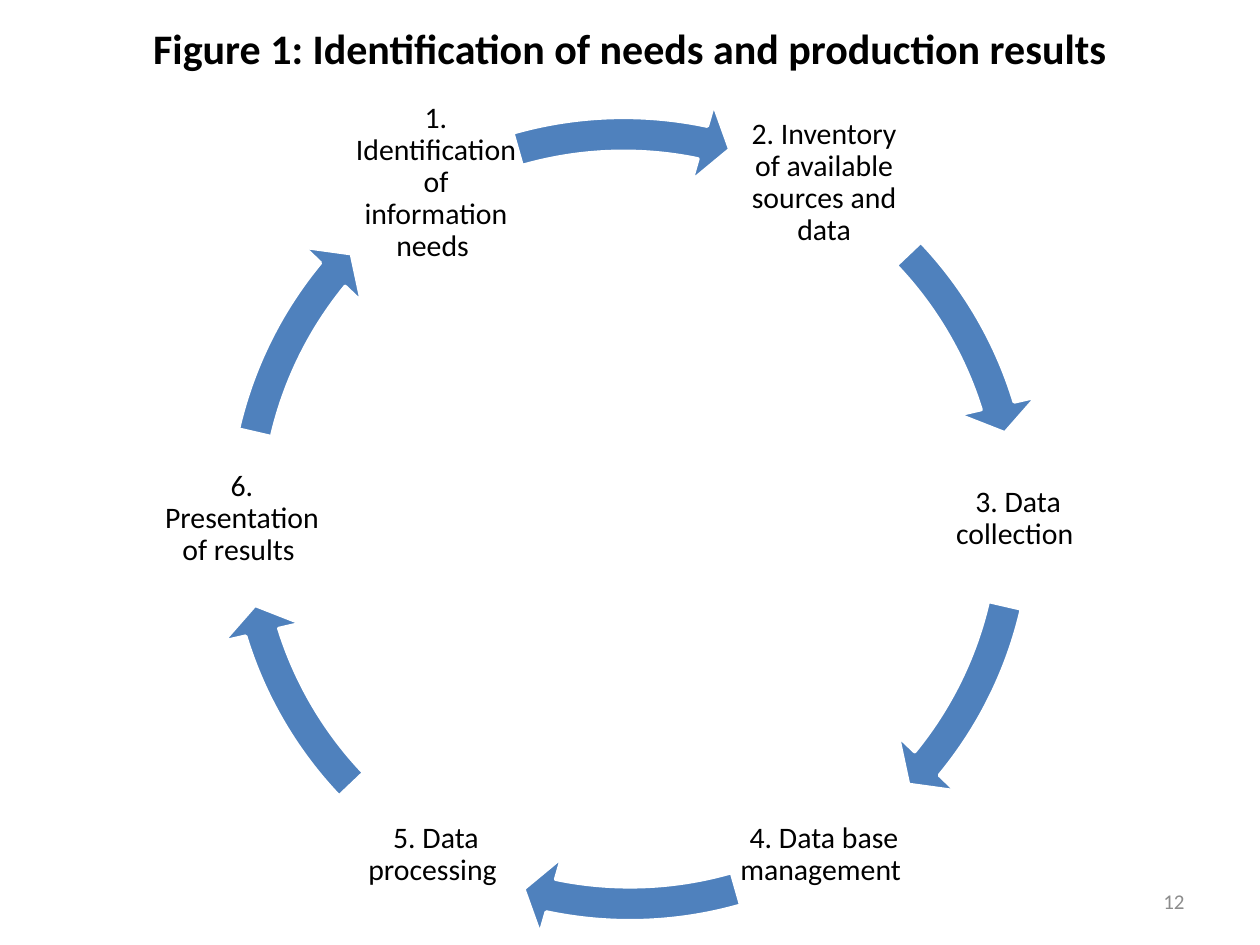
"""Build a slide with a six-step cycle of labels and curved arrows."""
import math
import pptx
import pptx.util
import pptx.dml.color
import pptx.enum.shapes
import pptx.enum.text

Inches, Pt = pptx.util.Inches, pptx.util.Pt
Align = pptx.enum.text.PP_ALIGN
hues = {"ink": "000000", "grey": "8C8C8C", "blue": "4F81BD", "white": "FFFFFF"}


def tint(name):
    return pptx.dml.color.RGBColor.from_string(hues[name])


def label(text, left, top, width, height, size, hue="ink", align=Align.CENTER, pad=None):
    box = slide.shapes.add_textbox(Inches(left), Inches(top), Inches(width), Inches(height))
    frame = box.text_frame
    frame.word_wrap = True
    frame.vertical_anchor = pptx.enum.text.MSO_ANCHOR.MIDDLE
    if pad is not None:
        frame.margin_left = frame.margin_right = Inches(pad)
        frame.margin_top = frame.margin_bottom = Inches(pad)
    frame.text = text
    para = frame.paragraphs[0]
    para.alignment = align
    font = para.runs[0].font
    font.name, font.size = "Calibri", Pt(size)
    font.color.rgb = tint(hue)
    return para


deck = pptx.Presentation()
deck.slide_width, deck.slide_height = Inches(10), Inches(7.5)
slide = deck.slides.add_slide(deck.slide_layouts[6])

title = label("Figure 1: Identification of needs and production results", 0.75, 0, 8.5, 0.75, 24)
title.runs[0].font.bold = True
label("12", 7.17, 6.95, 2.33, 0.4, 12, "grey", Align.RIGHT)

steps = [
    "2. Inventory of available sources and data",
    "3. Data collection ",
    "4. Data base management ",
    "5. Data processing ",
    "6. Presentation of results ",
    "1. Identification of information needs ",
]
arcs = [(316.39, 342.88), (12.94, 39.44), (73.98, 101.85)]
mid_x, mid_y, radius = 5, 4.12, 3.08
side, ring = 1.38, 6.74
unit = 60000 / 100000

for num, step in enumerate(steps):
    angle = math.radians(60 * num - 60)
    left = mid_x + radius * math.cos(angle) - side / 2
    top = mid_y + radius * math.sin(angle) - side / 2
    para = label(step, left, top, side, side, 17, pad=0.02)
    para.line_spacing = 0.9

    shift = 0.05 if step.startswith("1.") else 0
    arrow = slide.shapes.add_shape(
        pptx.enum.shapes.MSO_SHAPE.CIRCULAR_ARROW,
        Inches(mid_x - ring / 2 - shift), Inches(mid_y - ring / 2),
        Inches(ring), Inches(ring))
    start, end = [(deg + 180 * (num // 3)) % 360 for deg in arcs[num % 3]]
    for spot, value in enumerate([0.04, 4.17 * unit, end * unit, start * unit, 0.047]):
        arrow.adjustments[spot] = value
    arrow.shadow.inherit = False
    arrow.fill.solid()
    arrow.fill.fore_color.rgb = tint("blue")
    arrow.line.color.rgb = tint("white")
    arrow.line.width = Pt(2)

deck.save("out.pptx")
